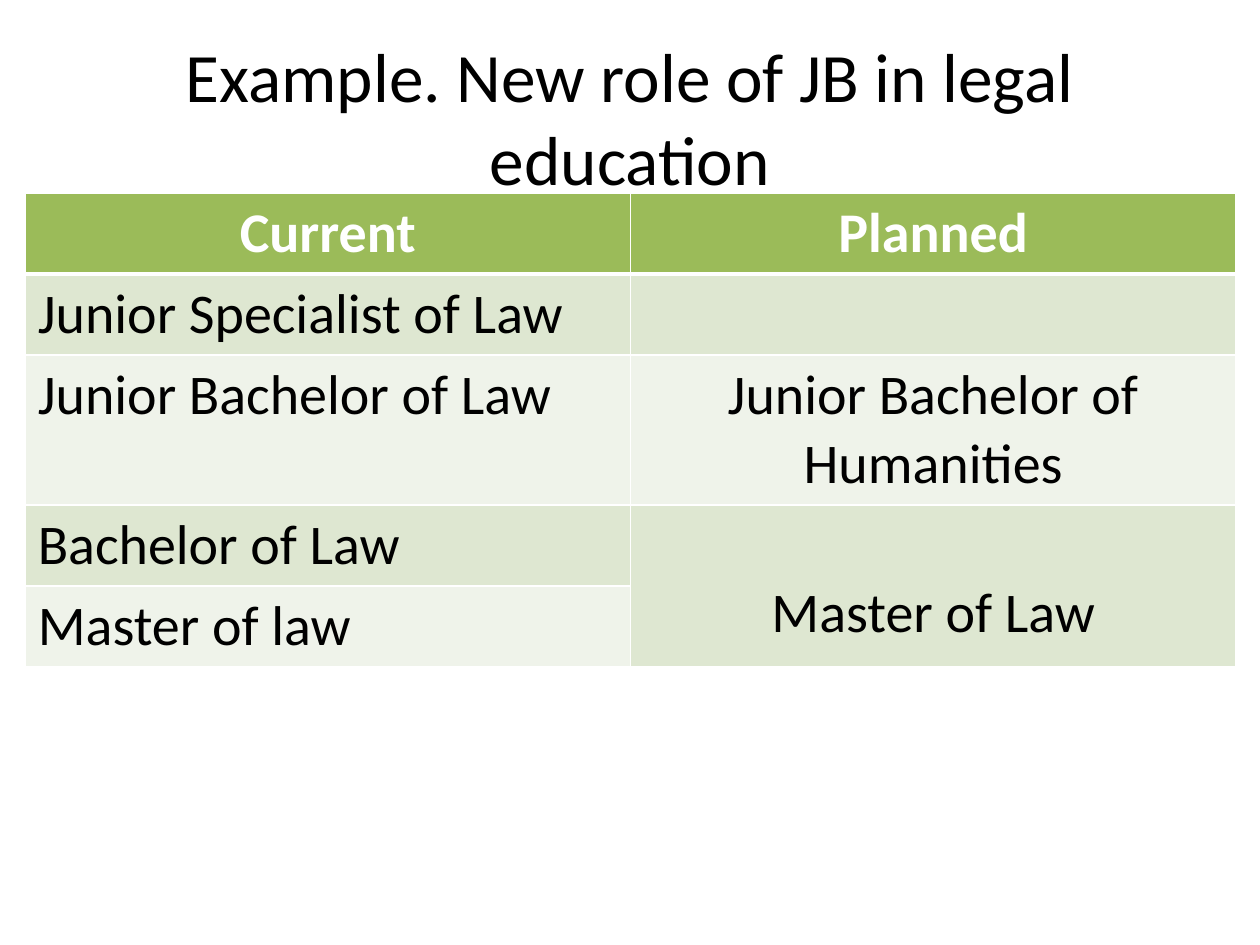
from dataclasses import dataclass

import pptx
import pptx.dml.color
import pptx.enum.text
import pptx.oxml
import pptx.oxml.ns
import pptx.table
import pptx.text.text
import pptx.util

Inches = pptx.util.Inches
RGB = pptx.dml.color.RGBColor
Align = pptx.enum.text.PP_ALIGN

BLACK = RGB(0x00, 0x00, 0x00)
WHITE = RGB(0xFF, 0xFF, 0xFF)
GREEN = RGB(0x9B, 0xBB, 0x59)
SAGE = RGB(0xDE, 0xE7, 0xD1)
PALE = RGB(0xEF, 0xF3, 0xEA)


@dataclass
class Row:
    now: str
    plan: str
    high: float


ROWS = [
    Row("Current", "Planned", 0.63),
    Row("Junior Specialist of Law", "", 0.64),
    Row("Junior Bachelor of Law", "Junior Bachelor of Humanities", 1.19),
    Row("Bachelor of Law", "Master of Law", 0.64),
    Row("Master of law", "", 0.64),
]


def style(par: pptx.text.text._Paragraph, size: float, color: RGB,
          align: Align, bold: bool = False) -> None:
    par.alignment = align
    par.font.color.rgb = color
    look = {"name": "Calibri", "size": pptx.util.Pt(size), "bold": bold}
    for key, value in look.items():
        setattr(par.font, key, value)


def edge(cell: pptx.table._Cell, head: bool) -> None:
    """Give the cell white borders, thicker below the header."""
    props = cell._tc.get_or_add_tcPr()
    for spot, side in enumerate("LRTB"):
        width = pptx.util.Pt(3 if head and side == "B" else 1)
        line = pptx.oxml.parse_xml(
            f'<a:ln{side} {pptx.oxml.ns.nsdecls("a")} w="{width}">'
            f'<a:solidFill><a:srgbClr val="{WHITE}"/></a:solidFill></a:ln{side}>')
        props.insert(spot, line)


def paint(cell: pptx.table._Cell, text: str, row: int, col: int) -> None:
    head = row == 0
    cell.fill.solid()
    cell.fill.fore_color.rgb = GREEN if head else SAGE if row % 2 else PALE
    edge(cell, head)
    cell.text = text
    style(cell.text_frame.paragraphs[0], 32, WHITE if head else BLACK,
          Align.CENTER if head or col else Align.LEFT, head)


def main() -> None:
    deck = pptx.Presentation()
    deck.slide_width, deck.slide_height = Inches(10), Inches(7.5)
    slide = deck.slides.add_slide(deck.slide_layouts[5])

    title = slide.shapes.title
    place = {"left": 0.5, "top": 0.3, "width": 9, "height": 1.25}
    for key, value in place.items():
        setattr(title, key, Inches(value))
    title.text = "Example. New role of JB in legal education"
    title.text_frame.auto_size = pptx.enum.text.MSO_AUTO_SIZE.NONE
    title.text_frame.vertical_anchor = pptx.enum.text.MSO_ANCHOR.MIDDLE
    style(title.text_frame.paragraphs[0], 39.6, BLACK, Align.CENTER)

    high = sum(row.high for row in ROWS)
    table = slide.shapes.add_table(len(ROWS), 2, Inches(0.2), Inches(1.53),
                                   Inches(9.61), Inches(high)).table
    for r, row in enumerate(ROWS):
        table.rows[r].height = Inches(row.high)
        for c, text in enumerate((row.now, row.plan)):
            paint(table.cell(r, c), text, r, c)

    master = table.cell(3, 1)
    master.merge(table.cell(4, 1))
    master.margin_top = Inches(0.59)

    deck.save("out.pptx")


if __name__ == "__main__":
    main()
